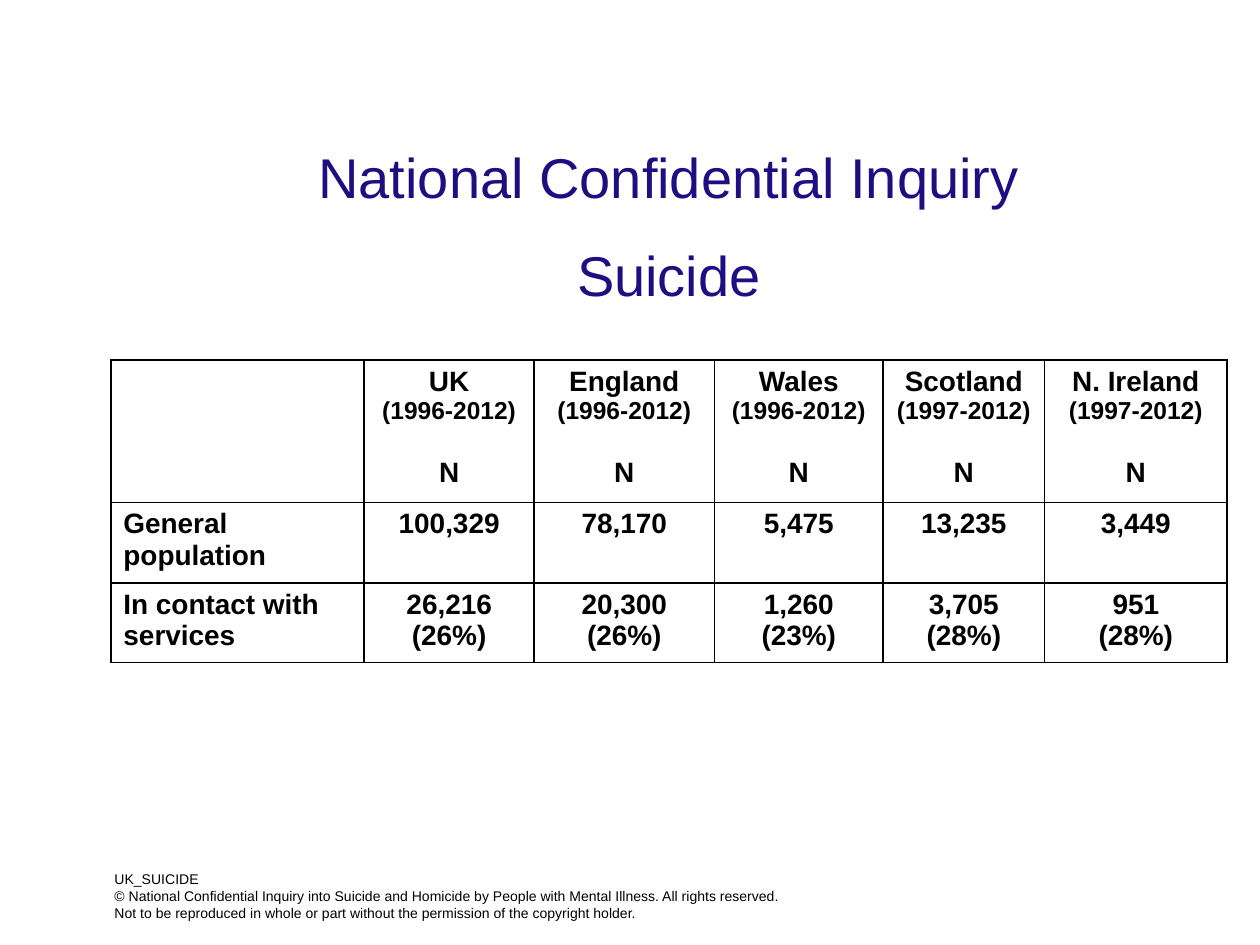
from dataclasses import dataclass
from typing import NamedTuple

from lxml.etree import SubElement
from pptx import Presentation
from pptx.dml.color import RGBColor
from pptx.enum.text import MSO_ANCHOR, MSO_AUTO_SIZE, PP_ALIGN
from pptx.oxml.ns import qn
from pptx.util import Inches, Pt


@dataclass(frozen=True)
class Theme:
    font: str = "Arial"
    title_color: str = "1D0E82"
    ink: str = "000000"
    title: int = 32
    body: int = 16
    years: int = 14
    footer: int = 8
    title_gap: float = 17.5
    blank_line: float = 18.4
    border: int = 1


class Box(NamedTuple):
    """Left, top, width and height as shares of the slide."""
    x: float
    y: float
    w: float
    h: float


class Region(NamedTuple):
    name: str
    years: str
    population: str
    contact: str
    share: str
    width: float


THEME = Theme()
SLIDE_W, SLIDE_H = Inches(10), Inches(7.5)
TITLE_BOX = Box(0.099, 0.188, 0.864, 0.101)
FOOTER_BOX = Box(0.081, 0.915, 0.549, 0.085)
TABLE_AT = Box(0.088, 0.381, 0.886, 0.32)
LABEL_WIDTH = 2.01
ROW_HEIGHTS = (1.13, 0.64, 0.63)
REGIONS = [
    Region("UK", "1996-2012", "100,329", "26,216", "26%", 1.35),
    Region("England", "1996-2012", "78,170", "20,300", "26%", 1.43),
    Region("Wales", "1996-2012", "5,475", "1,260", "23%", 1.34),
    Region("Scotland", "1997-2012", "13,235", "3,705", "28%", 1.28),
    Region("N. Ireland", "1997-2012", "3,449", "951", "28%", 1.45),
]


def place(box: Box) -> tuple[int, int, int, int]:
    return (int(box.x * SLIDE_W), int(box.y * SLIDE_H),
            int(box.w * SLIDE_W), int(box.h * SLIDE_H))


def add_text(tf, text: str, *, size: float, color: str = THEME.ink,
             bold: bool = False, align=PP_ALIGN.LEFT, before: float = 0) -> None:
    """Fill the empty first paragraph, or append another one."""
    p = tf.paragraphs[0] if not tf.text else tf.add_paragraph()
    p.alignment = align
    if before:
        p.space_before = Pt(before)
    r = p.add_run()
    r.text = text
    r.font.name, r.font.size, r.font.bold = THEME.font, Pt(size), bold
    r.font.color.rgb = RGBColor.from_string(color)


def add_cell_borders(cell) -> None:
    tc_pr = cell._tc.get_or_add_tcPr()
    for i, side in enumerate(("lnL", "lnR", "lnT", "lnB")):
        ln = SubElement(tc_pr, qn(f"a:{side}"), w=str(Pt(THEME.border)))
        fill = SubElement(ln, qn("a:solidFill"))
        SubElement(fill, qn("a:srgbClr"), val=THEME.ink)
        tc_pr.insert(i, ln)


def fill_cell(cell, lines: list[str], align=PP_ALIGN.CENTER) -> None:
    cell.fill.background()
    add_cell_borders(cell)
    for line in lines:
        add_text(cell.text_frame, line, size=THEME.body, bold=True, align=align)


def fill_header(cell, region: Region) -> None:
    fill_cell(cell, [region.name])
    style = dict(bold=True, align=PP_ALIGN.CENTER)
    add_text(cell.text_frame, f"({region.years})", size=THEME.years, **style)
    add_text(cell.text_frame, "N", size=THEME.body, before=THEME.blank_line, **style)


def add_title(s) -> None:
    tf = s.shapes.add_textbox(*place(TITLE_BOX)).text_frame
    tf.word_wrap = True
    tf.vertical_anchor = MSO_ANCHOR.MIDDLE
    style = dict(size=THEME.title, color=THEME.title_color, align=PP_ALIGN.CENTER)
    add_text(tf, "National Confidential Inquiry", **style)
    add_text(tf, "Suicide", before=THEME.title_gap, **style)


def add_figures(s) -> None:
    table = s.shapes.add_table(len(ROW_HEIGHTS), len(REGIONS) + 1,
                               *place(TABLE_AT)).table
    table.first_row = table.horz_banding = False
    for row, height in zip(table.rows, ROW_HEIGHTS):
        row.height = Inches(height)
    widths = [LABEL_WIDTH] + [region.width for region in REGIONS]
    for column, width in zip(table.columns, widths):
        column.width = Inches(width)

    # Row labels
    labels = ([], ["General", "population"], ["In contact with", "services"])
    for i, lines in enumerate(labels):
        fill_cell(table.cell(i, 0), lines, PP_ALIGN.LEFT)

    # One column per region
    for j, region in enumerate(REGIONS, start=1):
        fill_header(table.cell(0, j), region)
        fill_cell(table.cell(1, j), [region.population])
        fill_cell(table.cell(2, j), [region.contact, f"({region.share})"])


def add_footer(s) -> None:
    tf = s.shapes.add_textbox(*place(FOOTER_BOX)).text_frame
    tf.word_wrap = False
    tf.auto_size = MSO_AUTO_SIZE.SHAPE_TO_FIT_TEXT
    for line in (
        "UK_SUICIDE",
        "© National Confidential Inquiry into Suicide and Homicide by People "
        "with Mental Illness. All rights reserved.",
        "Not to be reproduced in whole or part without the permission of the "
        "copyright holder.",
    ):
        add_text(tf, line, size=THEME.footer)


def main() -> None:
    prs = Presentation()
    prs.slide_width, prs.slide_height = SLIDE_W, SLIDE_H
    s = prs.slides.add_slide(prs.slide_layouts[6])
    add_figures(s)
    add_title(s)
    add_footer(s)
    prs.save("out.pptx")


if __name__ == "__main__":
    main()
